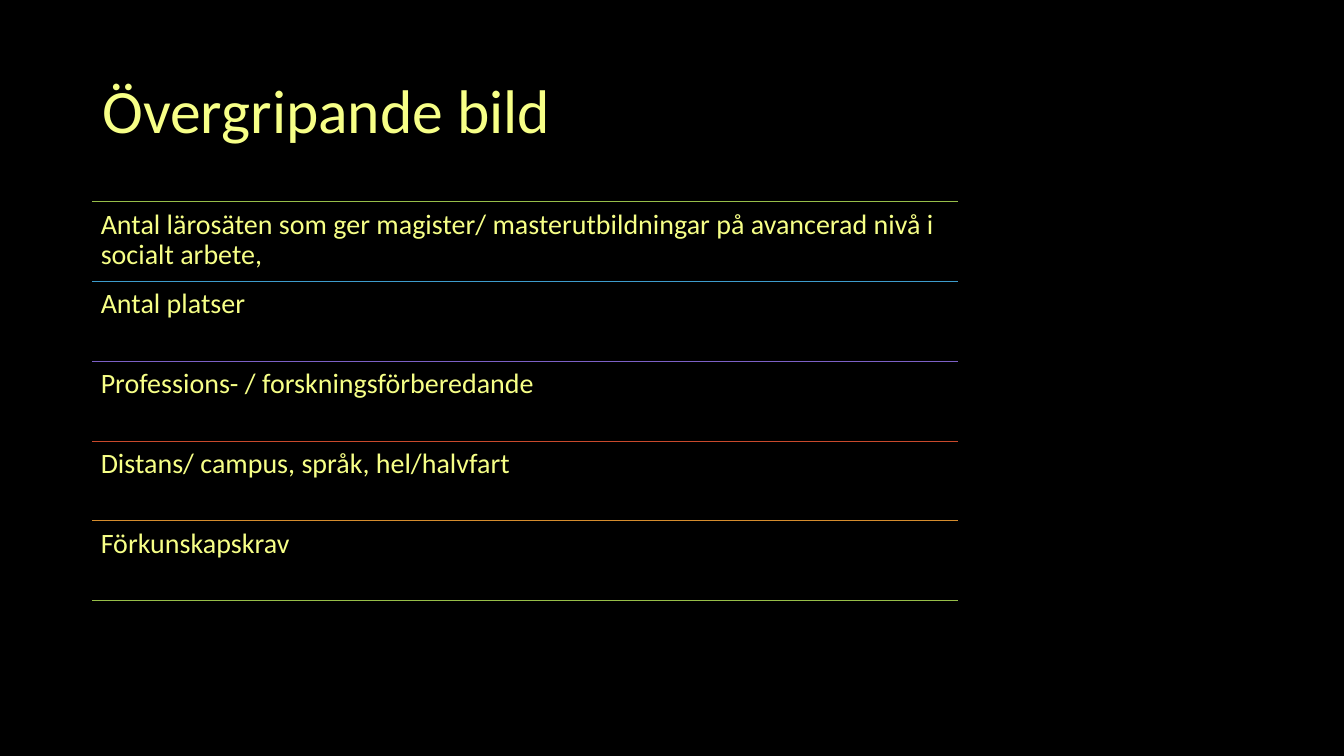
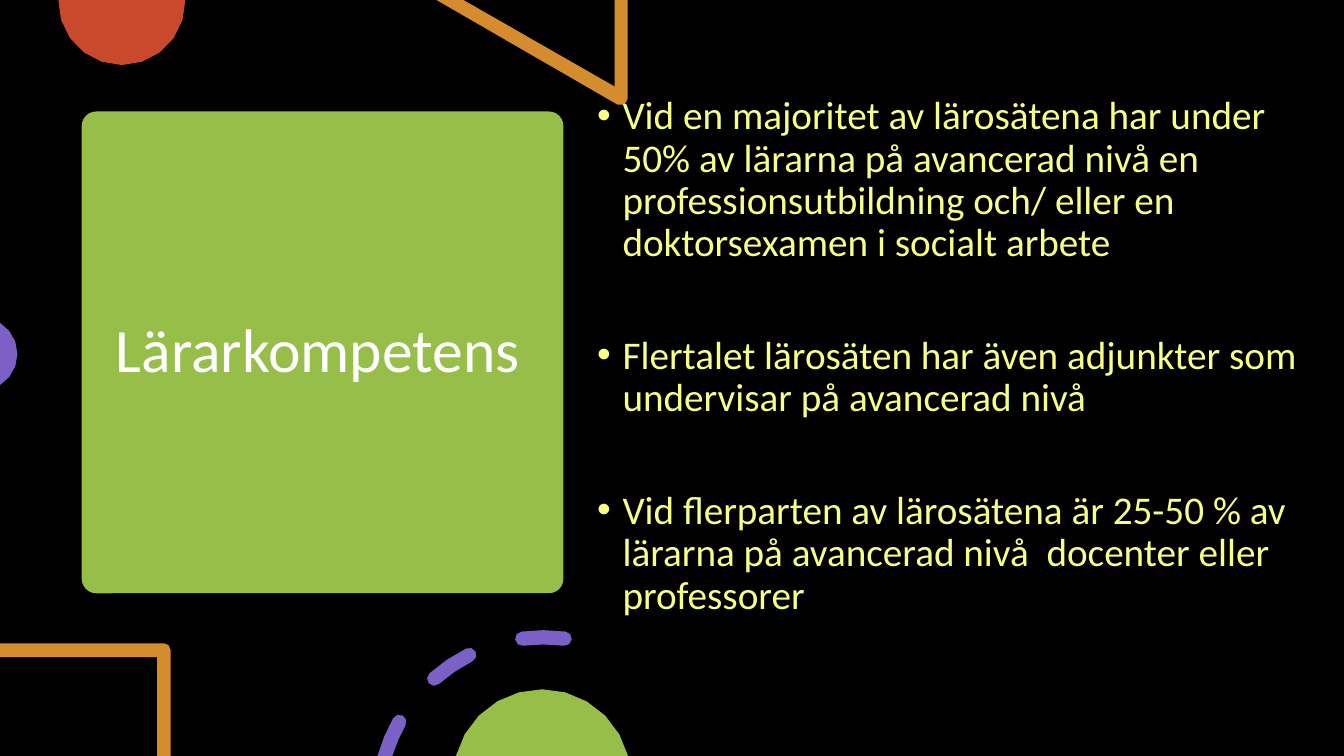
"""Build two dark slides on master's programmes in social work."""
from dataclasses import dataclass
from math import acos, asin, cos, degrees, radians, sin

from lxml import etree
from pptx import Presentation
from pptx.dml.color import RGBColor
from pptx.enum.shapes import MSO_CONNECTOR, MSO_SHAPE
from pptx.enum.text import MSO_ANCHOR
from pptx.oxml.ns import qn
from pptx.shapes.autoshape import Shape
from pptx.slide import Slide
from pptx.text.text import TextFrame, _Paragraph
from pptx.util import Cm, Pt

STRAIGHT = MSO_CONNECTOR.STRAIGHT
ROUNDED = MSO_SHAPE.ROUNDED_RECTANGLE
TOP, MIDDLE = MSO_ANCHOR.TOP, MSO_ANCHOR.MIDDLE

COLOURS = {
    "black": "000000",
    "white": "FFFFFF",
    "yellow": "F7FF87",
    "green": "97BE49",
    "blue": "3D9CCC",
    "purple": "7C60C6",
    "red": "C9492C",
    "orange": "D58C2E",
}
FONT = "Calibri"
TITLE_SIZE, BODY_SIZE, TOPIC_SIZE = 44, 28, 20
SLIDE_WIDTH, SLIDE_HEIGHT = 33.87, 19.05

Point = tuple[float, float]


@dataclass(frozen=True)
class Box:
    """A rectangle in centimetres."""
    left: float
    top: float
    width: float
    height: float


@dataclass(frozen=True)
class Topic:
    """A topic and the colour of the rule above it."""
    text: str
    colour: str


@dataclass(frozen=True)
class CutDisc:
    """A disc cut by a slide edge lying at a depth from its centre."""
    centre: Point
    radius: float
    facing: float
    depth: float
    steps: int
    colour: str

    def outline(self) -> list[Point]:
        """Return the arc that remains inside the edge."""
        half = degrees(acos(self.depth / self.radius))
        return arc(self.centre, self.radius, self.facing - half, self.facing + half, self.steps)


TOPICS = (
    Topic("Antal lärosäten som ger magister/ masterutbildningar på avancerad nivå i socialt arbete,", "green"),
    Topic("Antal platser", "blue"),
    Topic("Professions- / forskningsförberedande", "purple"),
    Topic("Distans/ campus, språk, hel/halvfart", "red"),
    Topic("Förkunskapskrav", "orange"),
)
TOPICS_END_COLOUR = "green"
TOPICS_LEFT, TOPICS_TOP, TOPICS_WIDTH, TOPIC_PITCH = 2.33, 5.08, 21.82, 2.01

FINDINGS = (
    "Vid en majoritet av lärosätena har under 50% av lärarna på avancerad nivå en "
    "professionsutbildning och/ eller en doktorsexamen i socialt arbete",
    "Flertalet lärosäten har även adjunkter som undervisar på avancerad nivå",
    "Vid flerparten av lärosätena är 25-50 % av lärarna på avancerad nivå  docenter eller professorer",
)
FINDING_GAP = 50.2

RED_DISC = CutDisc((3.07, 0.04), 1.6, 90, -0.04, 10, "red")
PURPLE_DISC = CutDisc((-0.48, 8.92), 0.92, 0, 0.48, 6, "purple")
GREEN_DISC = CutDisc((13.66, 19.61), 2.24, 270, 0.56, 10, "green")

RING_CENTRE, RING_RADIUS, RING_HALF_WIDTH = (13.7, 20.23), 4.17, 0.18
DASH_STARTS, DASH_SWEEP = (194.6, 228.6, 262.6), 14.7


def rgb(colour: str) -> RGBColor:
    """Look up a named colour."""
    return RGBColor.from_string(COLOURS[colour])


def arc(centre: Point, radius: float, start: float, end: float, steps: int = 2) -> list[Point]:
    """Return points along an arc, with angles clockwise from the right."""
    angles = (radians(start + (end - start) * step / steps) for step in range(steps + 1))
    return [(centre[0] + radius * cos(a), centre[1] + radius * sin(a)) for a in angles]


def ring_arc(radius: float, start: float, end: float) -> list[Point]:
    """Return an arc of the ring that starts no lower than the slide's bottom."""
    lowest = 180 + degrees(asin((RING_CENTRE[1] - SLIDE_HEIGHT) / radius))
    return arc(RING_CENTRE, radius, max(start, lowest), end)


def ring_dash(start: float) -> list[Point]:
    """Return a round-ended dash of the ring, cut flat at the slide's bottom."""
    end = start + DASH_SWEEP
    first, _, last = arc(RING_CENTRE, RING_RADIUS, start, end)
    outer = ring_arc(RING_RADIUS + RING_HALF_WIDTH, start, end)
    inner = ring_arc(RING_RADIUS - RING_HALF_WIDTH, start, end)
    end_cap = arc(last, RING_HALF_WIDTH, end, end + 180, 4)[1:-1]
    start_cap = arc(first, RING_HALF_WIDTH, start + 180, start + 360, 4)[1:-1]
    return outer + end_cap + inner[::-1] + (start_cap if first[1] < SLIDE_HEIGHT else [])


def paint(shape: Shape, colour: str) -> None:
    """Give a shape a flat fill without line or shadow."""
    shape.shadow.inherit = False
    shape.fill.solid()
    shape.fill.fore_color.rgb = rgb(colour)
    shape.line.fill.background()


def add_outline(slide: Slide, colour: str, *contours: list[Point]) -> None:
    """Draw closed contours as one filled shape."""
    placed = [[(Cm(x), Cm(y)) for x, y in contour] for contour in contours]
    builder = slide.shapes.build_freeform(*placed[0][0])
    for index, contour in enumerate(placed):
        if index:
            builder.move_to(*contour[0])
        builder.add_line_segments(contour[1:], close=True)
    paint(builder.convert_to_shape(), colour)


def add_disc(slide: Slide, disc: CutDisc) -> None:
    """Draw a disc cut by the slide edge."""
    add_outline(slide, disc.colour, disc.outline())


def add_frame(slide: Slide, box: Box, anchor: MSO_ANCHOR = TOP) -> TextFrame:
    """Add a wrapping text frame."""
    frame = slide.shapes.add_textbox(Cm(box.left), Cm(box.top), Cm(box.width), Cm(box.height)).text_frame
    frame.word_wrap = True
    frame.vertical_anchor = anchor
    return frame


def write(paragraph: _Paragraph, text: str, size: float, colour: str = "yellow") -> None:
    """Write one run in the shared text style."""
    paragraph.line_spacing = 0.9
    run = paragraph.add_run()
    run.text = text
    run.font.name = FONT
    run.font.size = Pt(size)
    run.font.color.rgb = rgb(colour)


def add_title(slide: Slide, text: str, box: Box, colour: str = "yellow") -> None:
    """Add a vertically centred title."""
    write(add_frame(slide, box, MIDDLE).paragraphs[0], text, TITLE_SIZE, colour)


def add_rule(slide: Slide, top: float, colour: str) -> None:
    """Draw a thin rule with a soft shadow across the topic list."""
    rule = slide.shapes.add_connector(
        STRAIGHT, Cm(TOPICS_LEFT), Cm(top), Cm(TOPICS_LEFT + TOPICS_WIDTH), Cm(top))
    rule.line.color.rgb = rgb(colour)
    rule.line.width = Pt(0.5)
    effects = etree.SubElement(rule._element.spPr, qn("a:effectLst"))
    shadow = etree.SubElement(effects, qn("a:outerShdw"), blurRad=str(Pt(4.5)), dist=str(Pt(1.5)),
                              dir="5400000", algn="ctr", rotWithShape="0")
    shade = etree.SubElement(shadow, qn("a:srgbClr"), val=COLOURS["black"])
    etree.SubElement(shade, qn("a:alpha"), val="63000")


def add_topic(slide: Slide, topic: Topic, top: float) -> None:
    """Add a rule with its topic below."""
    add_rule(slide, top, topic.colour)
    frame = add_frame(slide, Box(TOPICS_LEFT, top, TOPICS_WIDTH, TOPIC_PITCH))
    frame.margin_left = frame.margin_right = frame.margin_top = frame.margin_bottom = Cm(0.21)
    write(frame.paragraphs[0], topic.text, TOPIC_SIZE)


def add_bullet(paragraph: _Paragraph) -> None:
    """Give a paragraph a hanging bullet."""
    properties = paragraph._p.get_or_add_pPr()
    indent = Cm(0.64)
    properties.set("marL", str(indent))
    properties.set("indent", str(-indent))
    etree.SubElement(properties, qn("a:buFont"), typeface="Arial")
    etree.SubElement(properties, qn("a:buChar"), char="•")


def add_findings(slide: Slide, box: Box) -> None:
    """Add the bulleted findings."""
    frame = add_frame(slide, box)
    for index, finding in enumerate(FINDINGS):
        paragraph = frame.add_paragraph() if index else frame.paragraphs[0]
        paragraph.space_before = Pt(FINDING_GAP if index else 0)
        write(paragraph, finding, BODY_SIZE)
        add_bullet(paragraph)


def build_overview(slide: Slide) -> None:
    """Build the list of topics."""
    add_title(slide, "Övergripande bild", Box(2.33, 1.02, 14.99, 3.68))
    for index, topic in enumerate(TOPICS):
        add_topic(slide, topic, TOPICS_TOP + index * TOPIC_PITCH)
    add_rule(slide, TOPICS_TOP + len(TOPICS) * TOPIC_PITCH, TOPICS_END_COLOUR)


def build_competence(slide: Slide) -> None:
    """Build the slide on teachers' competence."""
    panel = slide.shapes.add_shape(ROUNDED, Cm(2.06), Cm(2.81), Cm(12.14), Cm(12.14))
    panel.adjustments[0] = 0.03
    paint(panel, "green")
    add_title(slide, "Lärarkompetens", Box(2.67, 3.1, 10.95, 11.58), "white")

    triangle = [(15.82, 0), (15.49, 0), (15.49, 2.18), (11.68, 0), (11, 0),
                *arc((15.65, 2.49), 0.17, 120, 0)]
    corner = [(0, 16.21), (0, 16.56), (3.96, 16.56), (3.96, SLIDE_HEIGHT), (4.3, SLIDE_HEIGHT),
              *arc((4.13, 16.38), 0.17, 360, 270)]
    add_disc(slide, RED_DISC)
    add_outline(slide, "orange", triangle)
    add_disc(slide, PURPLE_DISC)
    add_findings(slide, Box(14.8, 2.29, 18.44, 15.11))
    add_outline(slide, "orange", corner)
    add_outline(slide, "purple", *map(ring_dash, DASH_STARTS))
    add_disc(slide, GREEN_DISC)


def main() -> None:
    """Build and save the presentation."""
    presentation = Presentation()
    presentation.slide_width = Cm(SLIDE_WIDTH)
    presentation.slide_height = Cm(SLIDE_HEIGHT)
    backdrop = presentation.slide_master.background.fill
    backdrop.solid()
    backdrop.fore_color.rgb = rgb("black")
    for build in (build_overview, build_competence):
        build(presentation.slides.add_slide(presentation.slide_layouts[6]))
    presentation.save("out.pptx")


if __name__ == "__main__":
    main()
